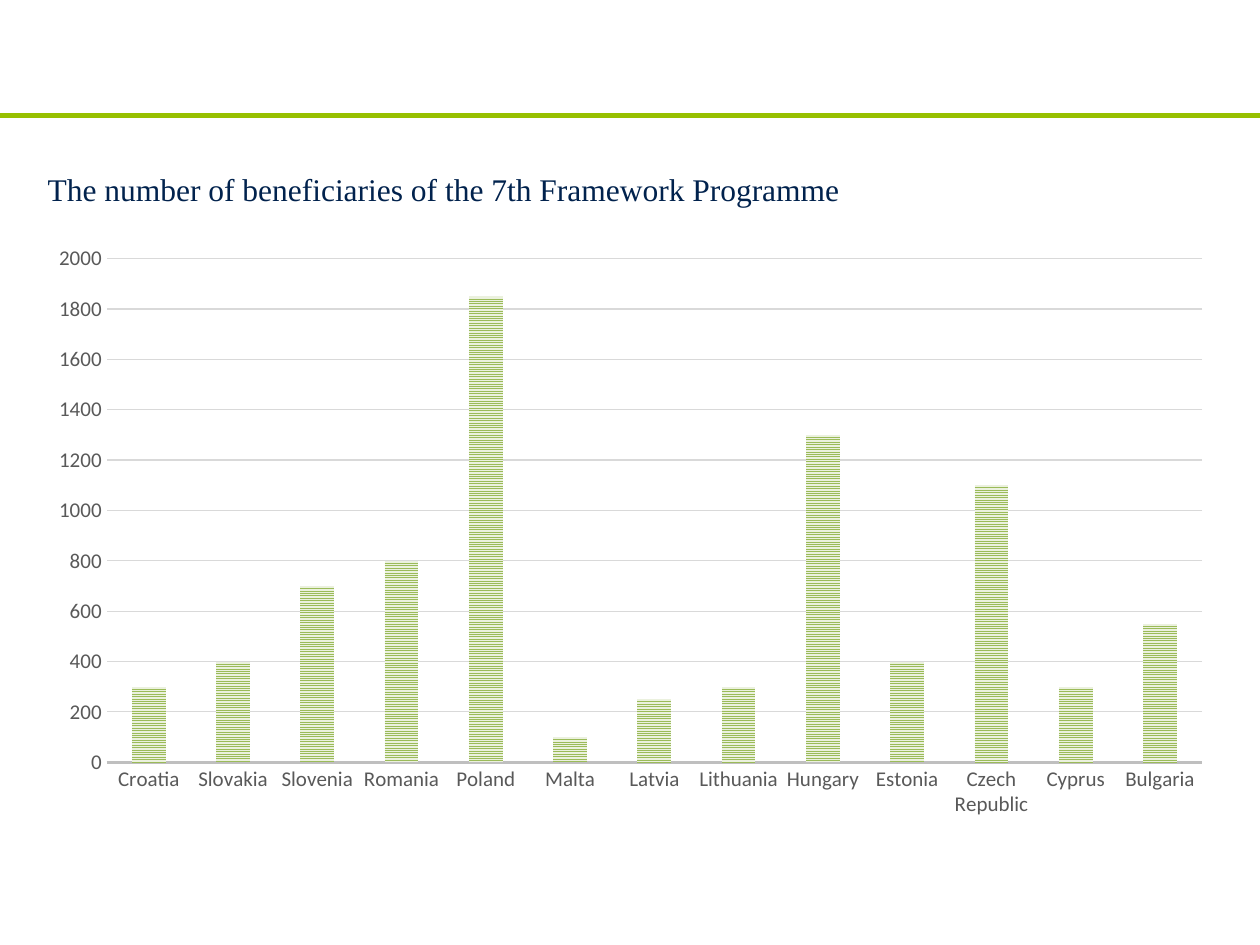
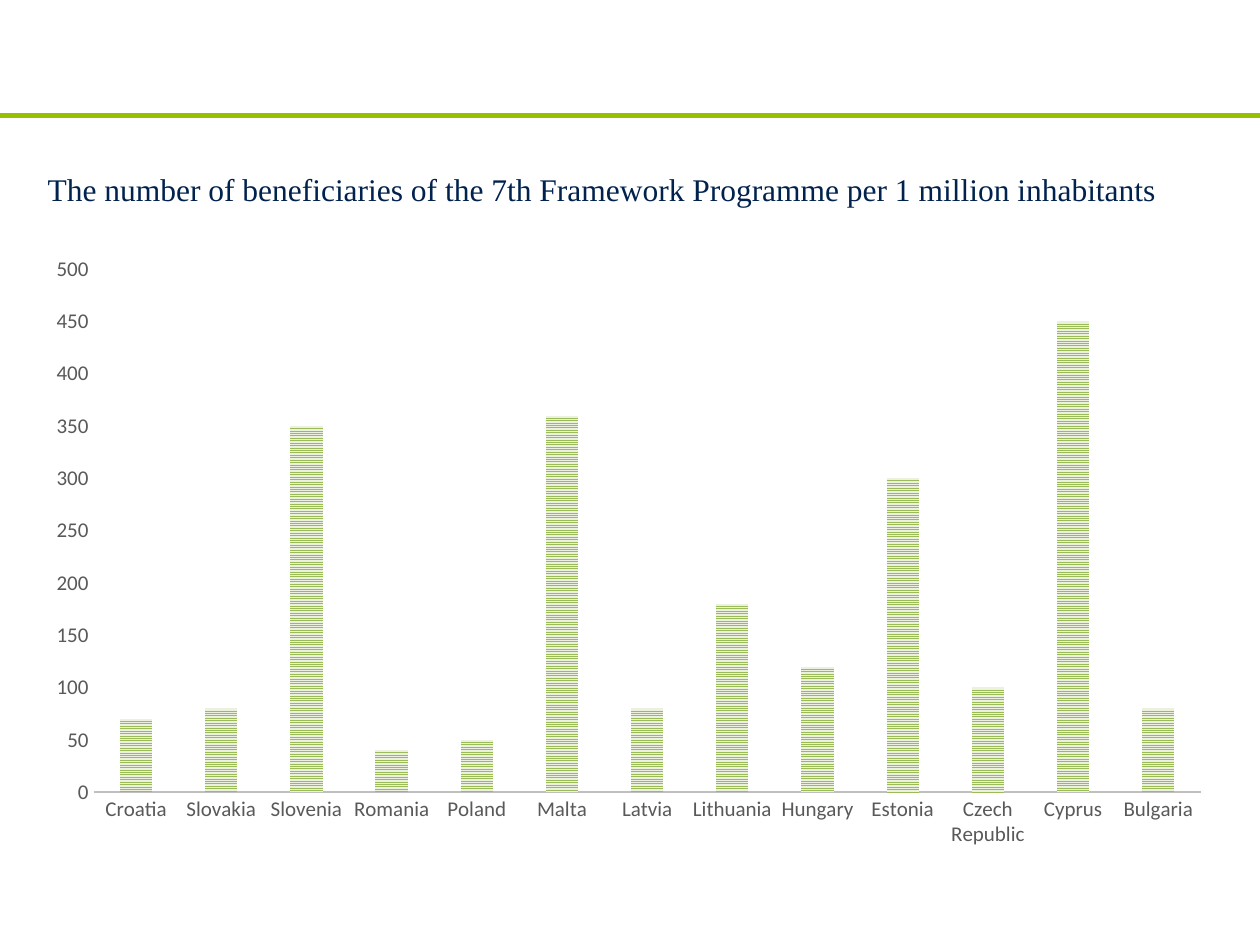
from pptx import Presentation, util as u
from pptx.chart.data import CategoryChartData
from pptx.dml.color import RGBColor
from pptx.enum import chart as ch, dml, shapes
from pptx.oxml.ns import qn
from lxml import etree

# Shared look
RULE_GREEN = RGBColor(0x97, 0xC0, 0x00)
TITLE_NAVY = RGBColor(0x01, 0x22, 0x4D)
BAR_GREEN = RGBColor(0x9B, 0xBB, 0x59)
BAR_PALE = RGBColor(0xEB, 0xF1, 0xDE)
LABEL_GREY = RGBColor(0x59, 0x59, 0x59)
AXIS_GREY = RGBColor(0xBF, 0xBF, 0xBF)
GRID_GREY = RGBColor(0xD9, 0xD9, 0xD9)
BLACK = RGBColor(0x00, 0x00, 0x00)
TITLE_FONT, CHART_FONT = "Times New Roman", "Calibri"
MARGIN, CONTENT_W = 0.28, 9.45

COUNTRIES = ["Croatia", "Slovakia", "Slovenia", "Romania", "Poland", "Malta", "Latvia",
             "Lithuania", "Hungary", "Estonia", "Czech Republic", "Cyprus", "Bulgaria"]
BENEFICIARIES = [300, 400, 700, 800, 1850, 100, 250, 300, 1300, 400, 1100, 300, 550]
PER_MILLION = [70, 80, 350, 40, 50, 360, 80, 180, 120, 300, 100, 450, 80]


def add_header_rule(prs, s):
    y = u.Inches(0.92)
    rule = s.shapes.add_connector(shapes.MSO_CONNECTOR.STRAIGHT, 0, y, prs.slide_width, y)
    rule.line.color.rgb = RULE_GREEN
    rule.line.width = u.Pt(2.75)
    etree.SubElement(rule._element.spPr, qn("a:effectLst"))


def add_title(s, title):
    box = s.shapes.add_textbox(*map(u.Inches, (MARGIN, 1.15, CONTENT_W, 0.5)))
    tf = box.text_frame
    tf.word_wrap = True
    p = tf.paragraphs[0]
    p.line_spacing = 1.5
    r = p.add_run()
    r.text = title
    r.font.size = u.Pt(18)
    r.font.name = TITLE_FONT
    r.font.color.rgb = TITLE_NAVY


def style_font(font, size, color):
    font.name = CHART_FONT
    font.size = u.Pt(size)
    font.color.rgb = color


def style_axes(chart, top, step, grid):
    for axis in (chart.category_axis, chart.value_axis):
        axis.major_tick_mark = axis.minor_tick_mark = ch.XL_TICK_MARK.NONE
        axis.has_major_gridlines = False
        style_font(axis.tick_labels.font, 12, LABEL_GREY)
    line = chart.category_axis.format.line
    line.color.rgb = AXIS_GREY
    line.width = u.Pt(1.5)

    values = chart.value_axis
    values.minimum_scale, values.maximum_scale, values.major_unit = 0, top, step
    values.format.line.fill.background()
    values.has_major_gridlines = grid
    if grid:
        line = values.major_gridlines.format.line
        line.color.rgb = GRID_GREY
        line.width = u.Pt(0.75)


def add_country_chart(s, kind, values, box, gap, overlap, top, step, grid):
    data = CategoryChartData()
    data.categories = COUNTRIES
    data.add_series("Series 1", values)
    chart = s.shapes.add_chart(kind, *map(u.Inches, box), data).chart
    chart.has_legend = chart.has_title = False
    style_font(chart.font, 10, BLACK)
    style_axes(chart, top, step, grid)

    plot = chart.plots[0]
    plot.gap_width, plot.overlap, plot.vary_by_categories = gap, overlap, False
    fill = plot.series[0].format.fill
    fill.patterned()
    fill.pattern = dml.MSO_PATTERN.NARROW_HORIZONTAL
    fill.fore_color.rgb = BAR_GREEN
    fill.back_color.rgb = BAR_PALE


def add_chart_slide(prs, title, **chart_options):
    s = prs.slides.add_slide(prs.slide_layouts[6])
    add_header_rule(prs, s)
    add_title(s, title)
    add_country_chart(s, **chart_options)


def main():
    prs = Presentation()
    prs.slide_width, prs.slide_height = u.Inches(10), u.Inches(7.5)
    title = "The number of beneficiaries of the 7th Framework Programme"

    # Totals by country
    add_chart_slide(prs, title, kind=ch.XL_CHART_TYPE.COLUMN_STACKED, values=BENEFICIARIES,
                    box=(MARGIN, 1.86, CONTENT_W, 4.72), gap=150, overlap=100,
                    top=2000, step=200, grid=True)

    # Relative to population
    add_chart_slide(prs, title + " per 1 million inhabitants",
                    kind=ch.XL_CHART_TYPE.COLUMN_CLUSTERED, values=PER_MILLION,
                    box=(0.26, 1.94, 9.46, 4.88), gap=164, overlap=-22,
                    top=500, step=50, grid=False)

    prs.save("out.pptx")


if __name__ == "__main__":
    main()
